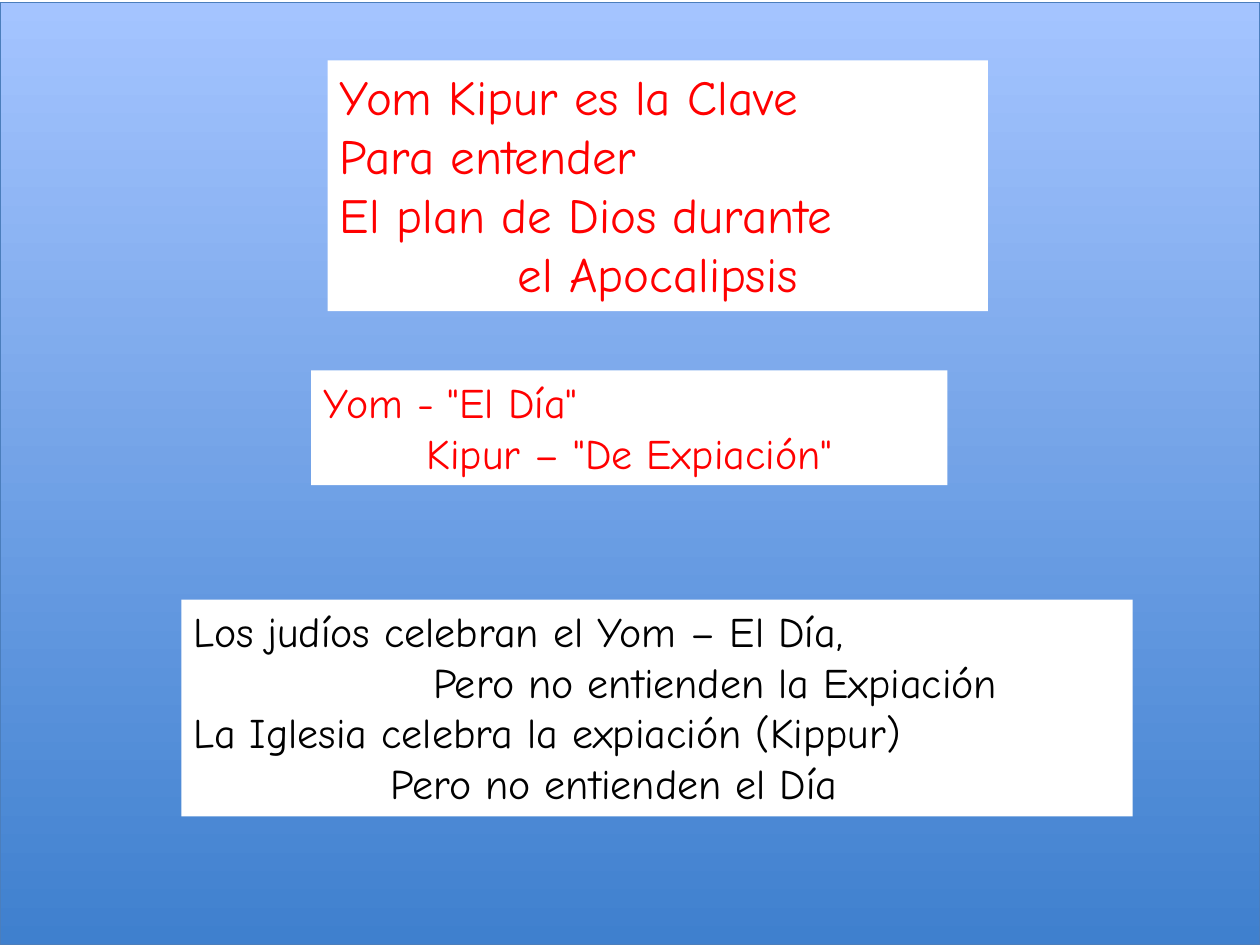
from pptx import Presentation
from pptx.dml.color import RGBColor
from pptx.enum.shapes import MSO_SHAPE
from pptx.enum.text import MSO_ANCHOR, MSO_AUTO_SIZE, PP_ALIGN
from pptx.util import Inches, Pt

COLORS = {
    "sky_top": "A4C4FF",
    "sky_bottom": "3F80CE",
    "border": "4B7EBC",
    "panel": "FFFFFF",
    "red": "FF0000",
    "black": "000000",
}
FONT = "Comic Neue"
LEFT, CENTER = PP_ALIGN.LEFT, PP_ALIGN.CENTER

presentation = Presentation()
presentation.slide_width = Inches(10)
presentation.slide_height = Inches(7.5)
slide = presentation.slides.add_slide(presentation.slide_layouts[6])

backdrop = slide.shapes.add_shape(
    MSO_SHAPE.RECTANGLE, Inches(0), Inches(0.02), Inches(10), Inches(7.48)
)
backdrop.shadow.inherit = False
backdrop.fill.gradient()
backdrop.fill.gradient_angle = 90
for stop, name in zip(backdrop.fill.gradient_stops, ("sky_bottom", "sky_top")):
    stop.color.rgb = RGBColor.from_string(COLORS[name])
backdrop.line.color.rgb = RGBColor.from_string(COLORS["border"])
backdrop.line.width = Pt(0.75)

panels = [
    ((2.6, 0.48, 5.24, 1.99), 28, "red", [
        ("Yom Kipur es la Clave", LEFT, 0),
        ("Para entender", LEFT, 0),
        ("El plan de Dios durante", LEFT, 0),
        ("el Apocalipsis", CENTER, 0),
    ]),
    ((2.47, 2.94, 5.05, 0.91), 24, "red", [
        ('Yom - "El Día"', LEFT, 0),
        ('Kipur – "De Expiación"', CENTER, 0),
    ]),
    ((1.44, 4.76, 7.55, 1.72), 24, "black", [
        ("Los judíos celebran el Yom – El Día,", LEFT, 0),
        ("Pero no entienden la Expiación", LEFT, 1.9),
        ("La Iglesia celebra la expiación (Kippur)", LEFT, 0),
        ("Pero no entienden el Día", LEFT, 1.56),
    ]),
]

for box, size, color, lines in panels:
    panel = slide.shapes.add_textbox(*[Inches(length) for length in box])
    panel.fill.solid()
    panel.fill.fore_color.rgb = RGBColor.from_string(COLORS["panel"])
    text_frame = panel.text_frame
    text_frame.word_wrap = True
    text_frame.auto_size = MSO_AUTO_SIZE.SHAPE_TO_FIT_TEXT
    text_frame.vertical_anchor = MSO_ANCHOR.TOP
    for index, (text, alignment, indent) in enumerate(lines):
        paragraph = text_frame.add_paragraph() if index else text_frame.paragraphs[0]
        paragraph.alignment = alignment
        if indent:
            paragraph._p.get_or_add_pPr().set("marL", str(Inches(indent)))
        run = paragraph.add_run()
        run.text = text
        run.font.name = FONT
        run.font.size = Pt(size)
        run.font.color.rgb = RGBColor.from_string(COLORS[color])

presentation.save("out.pptx")
